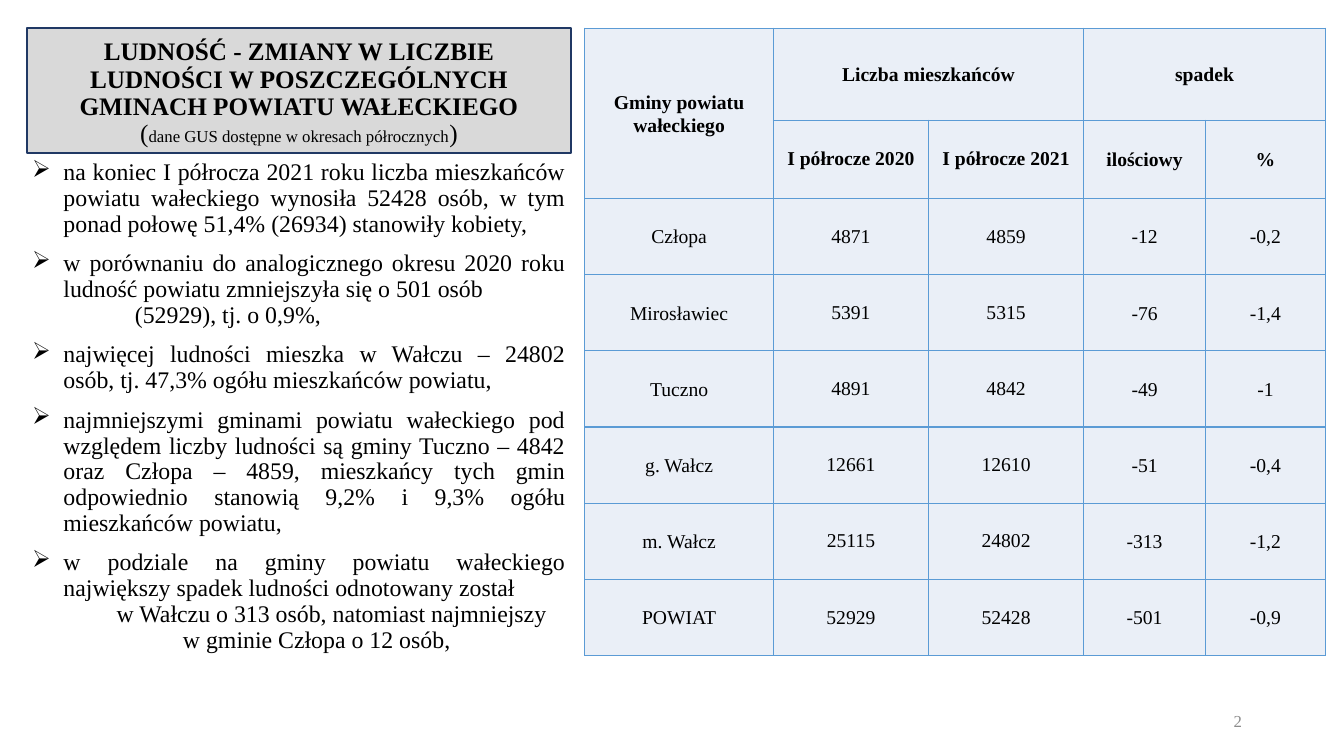
import dataclasses
import typing

import pptx
import pptx.dml.color
import pptx.enum.shapes
import pptx.enum.text
import pptx.oxml
import pptx.oxml.ns
import pptx.util

Cm = pptx.util.Cm
Pt = pptx.util.Pt
ALIGN = pptx.enum.text.PP_ALIGN
ANCHOR = pptx.enum.text.MSO_ANCHOR
FONT = "Times New Roman"
HUES = {
    "ink": "000000",
    "head": "D9D9D9",
    "frame": "203864",
    "cell": "EAEFF7",
    "grid": "5B9BD5",
    "page": "8C8C8C",
}


@dataclasses.dataclass
class Point:
    """A bullet point, or a line set further in below one."""
    text: str
    left: float = 0.79
    mark: bool = True


POINTS = [
    Point("na koniec I półrocza 2021 roku liczba mieszkańców powiatu wałeckiego "
          "wynosiła 52428 osób, w tym ponad połowę 51,4% (26934) stanowiły kobiety,"),
    Point("w porównaniu do analogicznego okresu 2020 roku ludność powiatu "
          "zmniejszyła się o 501 osób"),
    Point("(52929), tj. o 0,9%,", 2.59, False),
    Point("najwięcej ludności mieszka w Wałczu – 24802 osób, tj. 47,3% ogółu "
          "mieszkańców powiatu,"),
    Point("najmniejszymi gminami powiatu wałeckiego pod względem liczby ludności "
          "są gminy Tuczno – 4842 oraz Człopa – 4859, mieszkańcy tych gmin "
          "odpowiednio stanowią 9,2% i 9,3% ogółu mieszkańców powiatu,"),
    Point("w podziale na gminy powiatu wałeckiego największy spadek ludności "
          "odnotowany został"),
    Point("w Wałczu o 313 osób, natomiast najmniejszy", 2.13, False),
    Point("w gminie Człopa o 12 osób,", 3.8, False),
]
ROWS = [
    ["Gminy powiatu wałeckiego", "Liczba mieszkańców", "", "spadek", ""],
    ["", "I półrocze 2020", "I półrocze 2021", "ilościowy", "%"],
    ["Człopa", "4871", "4859", "-12", "-0,2"],
    ["Mirosławiec", "5391", "5315", "-76", "-1,4"],
    ["Tuczno", "4891", "4842", "-49", "-1"],
    ["g. Wałcz", "12661", "12610", "-51", "-0,4"],
    ["m. Wałcz", "25115", "24802", "-313", "-1,2"],
    ["POWIAT", "52929", "52428", "-501", "-0,9"],
]
WIDTHS = [4.75, 3.91, 3.91, 3.07, 3.02]
HEIGHTS = [2.32, 1.97] + [1.92] * 6
SPANS = [((0, 0), (1, 0)), ((0, 1), (0, 2)), ((0, 3), (0, 4))]


def hue(name: str) -> pptx.dml.color.RGBColor:
    return pptx.dml.color.RGBColor.from_string(HUES[name])


def add_run(para: typing.Any, text: str, size: float,
            bold: bool = False, ink: str = "ink") -> None:
    run = para.add_run()
    run.text = text
    run.font.name = FONT
    run.font.size = Pt(size)
    run.font.bold = bold
    run.font.color.rgb = hue(ink)


def add_box(slide: typing.Any, left: float, top: float,
            width: float, height: float) -> typing.Any:
    box = slide.shapes.add_textbox(Cm(left), Cm(top), Cm(width), Cm(height))
    box.text_frame.word_wrap = True
    return box.text_frame


def add_tag(parent: typing.Any, tag: str, **attrs: str) -> typing.Any:
    item = pptx.oxml.parse_xml(f"<a:{tag} {pptx.oxml.ns.nsdecls('a')}/>")
    for key, value in attrs.items():
        item.set(key, value)
    parent.append(item)
    return item


def draw_title(slide: typing.Any) -> None:
    title = slide.shapes.title
    title.left, title.top = Cm(0.69), Cm(0.71)
    title.width, title.height = Cm(13.69), Cm(3.15)
    title.fill.solid()
    title.fill.fore_color.rgb = hue("head")
    title.line.color.rgb = hue("frame")
    title.line.width = Pt(1.5)
    frame = title.text_frame
    frame.word_wrap = True
    frame.auto_size = pptx.enum.text.MSO_AUTO_SIZE.NONE
    frame.vertical_anchor = ANCHOR.BOTTOM
    para = frame.paragraphs[0]
    para.alignment = ALIGN.CENTER
    para.line_spacing = 0.9
    for line in ("LUDNOŚĆ - ZMIANY W LICZBIE LUDNOŚCI W POSZCZEGÓLNYCH",
                 "GMINACH POWIATU WAŁECKIEGO"):
        add_run(para, line, 18, bold=True)
        para.add_line_break()
    add_run(para, "(", 18)
    add_run(para, "dane GUS dostępne w okresach półrocznych", 12)
    add_run(para, ")", 18)


def draw_points(slide: typing.Any, points: list[Point]) -> None:
    frame = add_box(slide, 0.56, 3.91, 13.94, 13.26)
    for i, point in enumerate(points):
        para = frame.add_paragraph() if i else frame.paragraphs[0]
        para.alignment = ALIGN.JUSTIFY
        para.line_spacing = 0.9
        para.space_before = Pt(10 if point.mark else 0)
        props = para._p.get_or_add_pPr()
        props.set("marL", str(Cm(point.left)))
        props.set("indent", str(-Cm(point.left) if point.mark else 0))
        if point.mark:
            add_tag(props, "buChar", char="➢")
        else:
            add_tag(props, "buNone")
        add_run(para, point.text, 17)


def draw_edge(cell: typing.Any) -> None:
    props = cell._tc.get_or_add_tcPr()
    for i, side in enumerate(("lnL", "lnR", "lnT", "lnB")):
        line = add_tag(props, side, w=str(Pt(1)))
        add_tag(add_tag(line, "solidFill"), "srgbClr", val=HUES["grid"])
        props.insert(i, line)


def draw_table(slide: typing.Any) -> None:
    table = slide.shapes.add_table(
        len(ROWS), len(WIDTHS), Cm(14.74), Cm(0.71),
        Cm(sum(WIDTHS)), Cm(sum(HEIGHTS))).table
    for col, width in zip(table.columns, WIDTHS):
        col.width = Cm(width)
    for row, height in zip(table.rows, HEIGHTS):
        row.height = Cm(height)
    for start, end in SPANS:
        table.cell(*start).merge(table.cell(*end))
    for r, texts in enumerate(ROWS):
        for c, text in enumerate(texts):
            cell = table.cell(r, c)
            cell.fill.solid()
            cell.fill.fore_color.rgb = hue("cell")
            draw_edge(cell)
            cell.vertical_anchor = ANCHOR.MIDDLE
            cell.margin_left = cell.margin_right = Cm(0.18)
            cell.margin_top = cell.margin_bottom = 0
            if not text:
                continue
            para = cell.text_frame.paragraphs[0]
            para.alignment = ALIGN.CENTER
            # Head counts are set tight, all other cells looser
            if r == 0 or c not in (1, 2):
                para.line_spacing = 1.07
                para.space_after = Pt(6)
            add_run(para, text, 14, bold=r < 2)


def draw_page(slide: typing.Any) -> None:
    frame = add_box(slide, 23.93, 17.65, 7.62, 1.02)
    frame.vertical_anchor = ANCHOR.MIDDLE
    para = frame.paragraphs[0]
    para.alignment = ALIGN.RIGHT
    add_run(para, "2", 12, ink="page")


def main() -> None:
    deck = pptx.Presentation()
    deck.slide_width, deck.slide_height = Cm(33.87), Cm(19.05)
    slide = deck.slides.add_slide(deck.slide_layouts[5])
    # Heading and remarks on the left
    draw_title(slide)
    draw_points(slide, POINTS)
    # Counts on the right
    draw_table(slide)
    # Page number
    draw_page(slide)
    deck.save("out.pptx")


if __name__ == "__main__":
    main()
